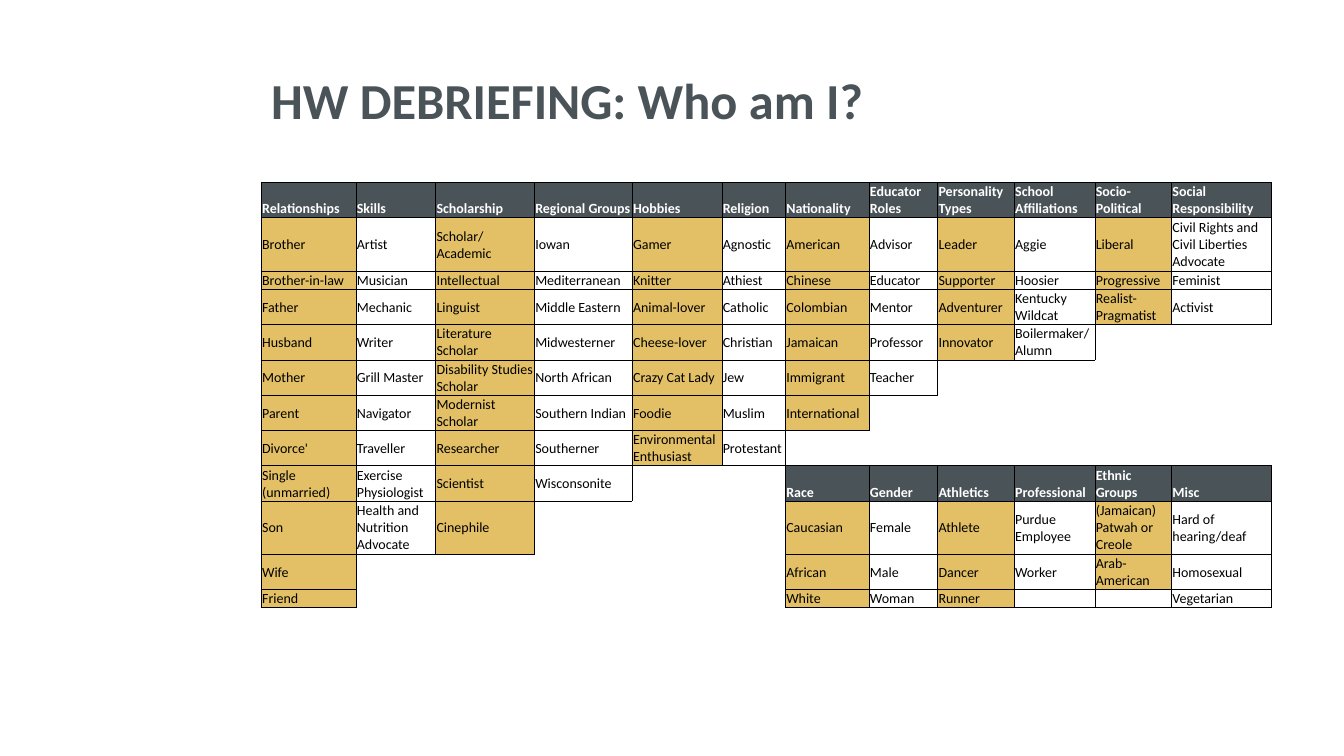
import pptx
import pptx.util
import pptx.dml.color
import pptx.enum.text
import pptx.oxml
import pptx.oxml.ns
from dataclasses import dataclass
from pptx.util import Inches


@dataclass(frozen=True)
class Theme:
    font: str = "Calibri"
    slate: str = "4A5358"
    gold: str = "E3C066"
    white: str = "FFFFFF"
    black: str = "000000"
    title: float = 36
    body: float = 10
    line: float = 0.5


THEME = Theme()
WIDTHS = [0.94, 0.79, 0.98, 0.97, 0.89, 0.63, 0.83, 0.68, 0.76, 0.8, 0.76, 0.99]
HEIGHTS = [0.35, 0.53, 0.18] + [0.35] * 6 + [0.53, 0.35, 0.18]
LOW_ROW, LOW_COL = 8, 6

# Each column starts with its heading
TOP = [
    ["Relationships", "Brother", "Brother-in-law", "Father", "Husband", "Mother",
     "Parent", "Divorce'", "Single (unmarried)", "Son", "Wife", "Friend"],
    ["Skills", "Artist", "Musician", "Mechanic", "Writer", "Grill Master", "Navigator",
     "Traveller", "Exercise Physiologist", "Health and Nutrition Advocate"],
    ["Scholarship", "Scholar/ Academic", "Intellectual", "Linguist",
     "Literature Scholar", "Disability Studies Scholar", "Modernist Scholar",
     "Researcher", "Scientist", "Cinephile"],
    ["Regional Groups", "Iowan", "Mediterranean", "Middle Eastern", "Midwesterner",
     "North African", "Southern Indian", "Southerner", "Wisconsonite"],
    ["Hobbies", "Gamer", "Knitter", "Animal-lover", "Cheese-lover", "Crazy Cat Lady",
     "Foodie", "Environmental Enthusiast"],
    ["Religion", "Agnostic", "Athiest", "Catholic", "Christian", "Jew", "Muslim",
     "Protestant"],
    ["Nationality", "American", "Chinese", "Colombian", "Jamaican", "Immigrant",
     "International"],
    ["Educator Roles", "Advisor", "Educator", "Mentor", "Professor", "Teacher"],
    ["Personality Types", "Leader", "Supporter", "Adventurer", "Innovator"],
    ["School Affiliations", "Aggie", "Hoosier", "Kentucky Wildcat",
     "Boilermaker/Alumn"],
    ["Socio-Political", "Liberal", "Progressive", "Realist-Pragmatist"],
    ["Social Responsibility", "Civil Rights and Civil Liberties Advocate", "Feminist",
     "Activist"],
]
LOW = [
    ["Race", "Caucasian", "African", "White"],
    ["Gender", "Female", "Male", "Woman"],
    ["Athletics", "Athlete", "Dancer", "Runner"],
    ["Professional", "Purdue Employee", "Worker", ""],
    ["Ethnic Groups", "(Jamaican) Patwah or Creole", "Arab-American", ""],
    ["Misc", "Hard of hearing/deaf", "Homosexual", "Vegetarian"],
]


def color(code):
    return pptx.dml.color.RGBColor.from_string(code)


def set_font(para, size, code, bold):
    font = para.font
    font.name, font.size, font.bold = THEME.font, pptx.util.Pt(size), bold
    font.color.rgb = color(code)


def place(cols, row, col):
    """Map (row, column) to text for a block of columns."""
    return {(row + r, col + c): text
            for c, items in enumerate(cols) for r, text in enumerate(items)}


def add_title(slide, text):
    box = slide.shapes.add_textbox(Inches(2.59), Inches(0.7), Inches(9.14), Inches(0.98))
    box.text_frame.word_wrap = True
    para = box.text_frame.paragraphs[0]
    para.text = text
    para.line_spacing = 0.9
    set_font(para, THEME.title, THEME.slate, True)


def set_edge(cell, side, shown):
    width = pptx.util.Pt(THEME.line)
    paint = (f'<a:solidFill><a:srgbClr val="{THEME.black}"/></a:solidFill>'
             if shown else "<a:noFill/>")
    cell._tc.get_or_add_tcPr().append(pptx.oxml.parse_xml(
        f'<a:ln{side} {pptx.oxml.ns.nsdecls("a")} w="{width}">{paint}</a:ln{side}>'))


def set_fill(cell, code):
    if code:
        cell.fill.solid()
        cell.fill.fore_color.rgb = color(code)
    else:
        cell.fill.background()


def fill_cell(cell, text, head, tint):
    anchor = pptx.enum.text.MSO_ANCHOR
    cell.margin_left = cell.margin_right = cell.margin_top = Inches(0.01)
    cell.margin_bottom = 0
    cell.vertical_anchor = anchor.BOTTOM if head else anchor.MIDDLE
    set_fill(cell, THEME.slate if head else THEME.gold if tint and text else None)
    para = cell.text_frame.paragraphs[0]
    if text:
        para.text = text
        set_font(para, THEME.body, THEME.white if head else THEME.black, head)
    else:
        # Small type keeps blank cells from stretching their row
        end = para._p.get_or_add_endParaRPr()
        end.set("sz", str(int(THEME.body * 100)))


def add_grid(slide, cells):
    frame = slide.shapes.add_table(len(HEIGHTS), len(WIDTHS), Inches(2.59), Inches(1.81),
                                   Inches(sum(WIDTHS)), Inches(sum(HEIGHTS)))
    table = frame.table
    table.first_row = table.horz_banding = False
    for col, width in zip(table.columns, WIDTHS):
        col.width = Inches(width)
    for row, height in zip(table.rows, HEIGHTS):
        row.height = Inches(height)

    for r in range(len(HEIGHTS)):
        for c in range(len(WIDTHS)):
            cell = table.cell(r, c)
            # An edge shows when a used cell lies on either side of it
            near = {"L": (r, c - 1), "R": (r, c + 1), "T": (r - 1, c), "B": (r + 1, c)}
            for side, spot in near.items():
                set_edge(cell, side, (r, c) in cells or spot in cells)
            head = r == 0 or (r == LOW_ROW and c >= LOW_COL)
            fill_cell(cell, cells.get((r, c), ""), head, c % 2 == 0)


def main():
    deck = pptx.Presentation()
    deck.slide_width, deck.slide_height = Inches(13.33), Inches(7.5)
    slide = deck.slides.add_slide(deck.slide_layouts[6])
    add_title(slide, "HW DEBRIEFING: Who am I?")
    add_grid(slide, place(TOP, 0, 0) | place(LOW, LOW_ROW, LOW_COL))
    deck.save("out.pptx")


if __name__ == "__main__":
    main()
